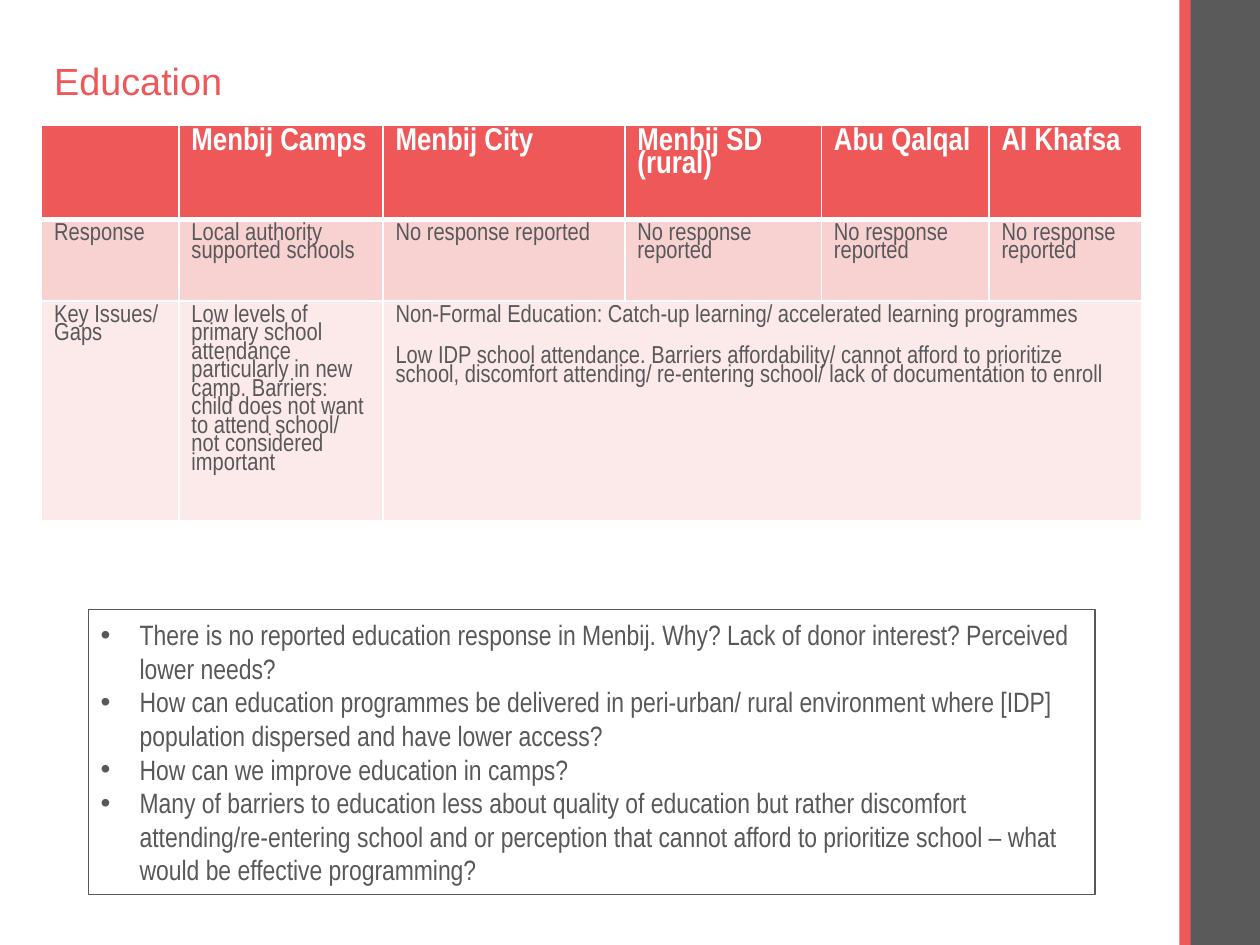
from dataclasses import dataclass

import pptx
import pptx.dml.color
import pptx.enum.shapes
import pptx.enum.text
import pptx.oxml
import pptx.oxml.ns
import pptx.util

COLUMNS, ROWS = 100, 75  # page grid


@dataclass(frozen=True)
class Theme:
    accent: str = "EE5859"
    band: str = "5A5A5A"
    text: str = "58585A"
    white: str = "FFFFFF"
    row_dark: str = "F8D1D1"
    row_light: str = "FCEAEA"
    heading_font: str = "Arial"
    body_font: str = "Arial Narrow"
    title: float = 21.6
    header: float = 18
    cell: float = 14
    question: float = 16


def rgb(value):
    return pptx.dml.color.RGBColor.from_string(value)


def write(tf, paragraphs, *, font, size, color, bold=False,
          spacing=None, gap=0, bullet_indent=0):
    """Fill a text frame; gap is the space in points between paragraphs."""
    tf.word_wrap = True
    for i, text in enumerate(paragraphs):
        p = tf.paragraphs[0] if i == 0 else tf.add_paragraph()
        p.alignment = pptx.enum.text.PP_ALIGN.LEFT
        if spacing:
            p.line_spacing = spacing
        p.space_before = pptx.util.Pt(gap if i else 0)
        if bullet_indent:
            pPr = p._p.get_or_add_pPr()
            pPr.set("marL", str(bullet_indent))
            pPr.set("indent", str(-bullet_indent))
            ns = pptx.oxml.ns.nsdecls("a")
            pPr.append(pptx.oxml.parse_xml(f'<a:buFont {ns} typeface="Arial"/>'))
            pPr.append(pptx.oxml.parse_xml(f'<a:buChar {ns} char="•"/>'))
        r = p.add_run()
        r.text = text
        r.font.name, r.font.size = font, pptx.util.Pt(size)
        r.font.bold, r.font.color.rgb = bold, rgb(color)


def set_borders(cell, color, bottom=1):
    tcPr = cell._tc.get_or_add_tcPr()
    widths = {"lnL": 1, "lnR": 1, "lnT": 1, "lnB": bottom}
    for i, (side, width) in enumerate(widths.items()):
        tcPr.insert(i, pptx.oxml.parse_xml(
            f'<a:{side} {pptx.oxml.ns.nsdecls("a")} w="{pptx.util.Pt(width)}">'
            f'<a:solidFill><a:srgbClr val="{color}"/></a:solidFill></a:{side}>'))


class Deck:
    def __init__(self, theme):
        self.theme = theme
        self.prs = pptx.Presentation()
        self.prs.slide_width = pptx.util.Inches(10)
        self.prs.slide_height = pptx.util.Inches(7.5)
        self.s = self.prs.slides.add_slide(self.prs.slide_layouts[5])

    def x(self, columns):
        return round(self.prs.slide_width * columns / COLUMNS)

    def y(self, rows):
        return round(self.prs.slide_height * rows / ROWS)

    def box(self, left, top, width, height):
        return self.x(left), self.y(top), self.x(width), self.y(height)

    def title(self, text, *place):
        sp = self.s.shapes.title
        sp.left, sp.top, sp.width, sp.height = self.box(*place)
        tf = sp.text_frame
        tf.vertical_anchor = pptx.enum.text.MSO_ANCHOR.MIDDLE
        write(tf, [text], font=self.theme.heading_font, size=self.theme.title,
              color=self.theme.accent, spacing=0.9)

    def rectangle(self, *place, fill=None, line=None):
        sp = self.s.shapes.add_shape(
            pptx.enum.shapes.MSO_SHAPE.RECTANGLE, *self.box(*place))
        sp.shadow.inherit = False
        if fill:
            sp.fill.solid()
            sp.fill.fore_color.rgb = rgb(fill)
        else:
            sp.fill.background()
        if line:
            sp.line.color.rgb = rgb(line)
            sp.line.width = pptx.util.Pt(0.75)
        else:
            sp.line.fill.background()
        return sp

    def questions(self, items, *place):
        tf = self.rectangle(*place, line=self.theme.text).text_frame
        tf.vertical_anchor = pptx.enum.text.MSO_ANCHOR.MIDDLE
        write(tf, items, font=self.theme.body_font, size=self.theme.question,
              color=self.theme.text, bullet_indent=self.x(3.1))

    def table(self, rows, left, top, widths, heights):
        """Draw rows of cells, each a list of paragraphs; a short row's last cell spans the rest."""
        t = self.theme
        place = self.box(left, top, sum(widths), sum(heights))
        table = self.s.shapes.add_table(len(rows), len(widths), *place).table
        for column, width in zip(table.columns, widths):
            column.width = self.x(width)
        for row, height in zip(table.rows, heights):
            row.height = self.y(height)
        fills = (t.accent, t.row_dark, t.row_light)
        for i, (row, fill) in enumerate(zip(rows, fills)):
            header = i == 0
            for j in range(len(widths)):
                cell = table.cell(i, j)
                cell.fill.solid()
                cell.fill.fore_color.rgb = rgb(fill)
                set_borders(cell, t.white, bottom=3 if header else 1)
            if len(row) < len(widths):
                table.cell(i, len(row) - 1).merge(table.cell(i, len(widths) - 1))
            for j, paragraphs in enumerate(row):
                write(table.cell(i, j).text_frame, paragraphs, font=t.body_font,
                      size=t.header if header else t.cell,
                      color=t.white if header else t.text,
                      bold=header, spacing=0.8, gap=13)


def main():
    theme = Theme()
    deck = Deck(theme)
    deck.rectangle(94.3, 0, 5.7, ROWS, fill=theme.band)
    deck.rectangle(93.6, 0, 0.9, ROWS, fill=theme.accent)
    deck.title("Education", 3.3, 4.6, 86.2, 4.1)

    places = ["Menbij Camps", "Menbij City", "Menbij SD (rural)",
              "Abu Qalqal", "Al Khafsa"]
    header = [[]] + [[place] for place in places]
    response = [["Response"], ["Local authority supported schools"]]
    response += [["No response reported"]] * 4
    issues = [
        ["Key Issues/ Gaps"],
        ["Low levels of primary school attendance particularly in new camp. "
         "Barriers: child does not want to attend school/ not considered important"],
        ["Non-Formal Education: Catch-up learning/ accelerated learning programmes",
         "Low IDP school attendance. Barriers affordability/ cannot afford to "
         "prioritize school, discomfort attending/ re-entering school/ lack of "
         "documentation to enroll"],
    ]
    deck.table([header, response, issues], 3.3, 9.9,
               widths=(10.9, 16.2, 19.2, 15.6, 13.3, 12.1),
               heights=(7.5, 6.5, 17.4))

    deck.questions([
        "There is no reported education response in Menbij. Why? Lack of donor "
        "interest? Perceived lower needs?",
        "How can education programmes be delivered in peri-urban/ rural "
        "environment where [IDP] population dispersed and have lower access?",
        "How can we improve education in camps?",
        "Many of barriers to education less about quality of education but rather "
        "discomfort attending/re-entering school and or perception that cannot "
        "afford to prioritize school – what would be effective programming?",
    ], 7, 48.4, 79.9, 22.6)
    deck.prs.save("out.pptx")


if __name__ == "__main__":
    main()
